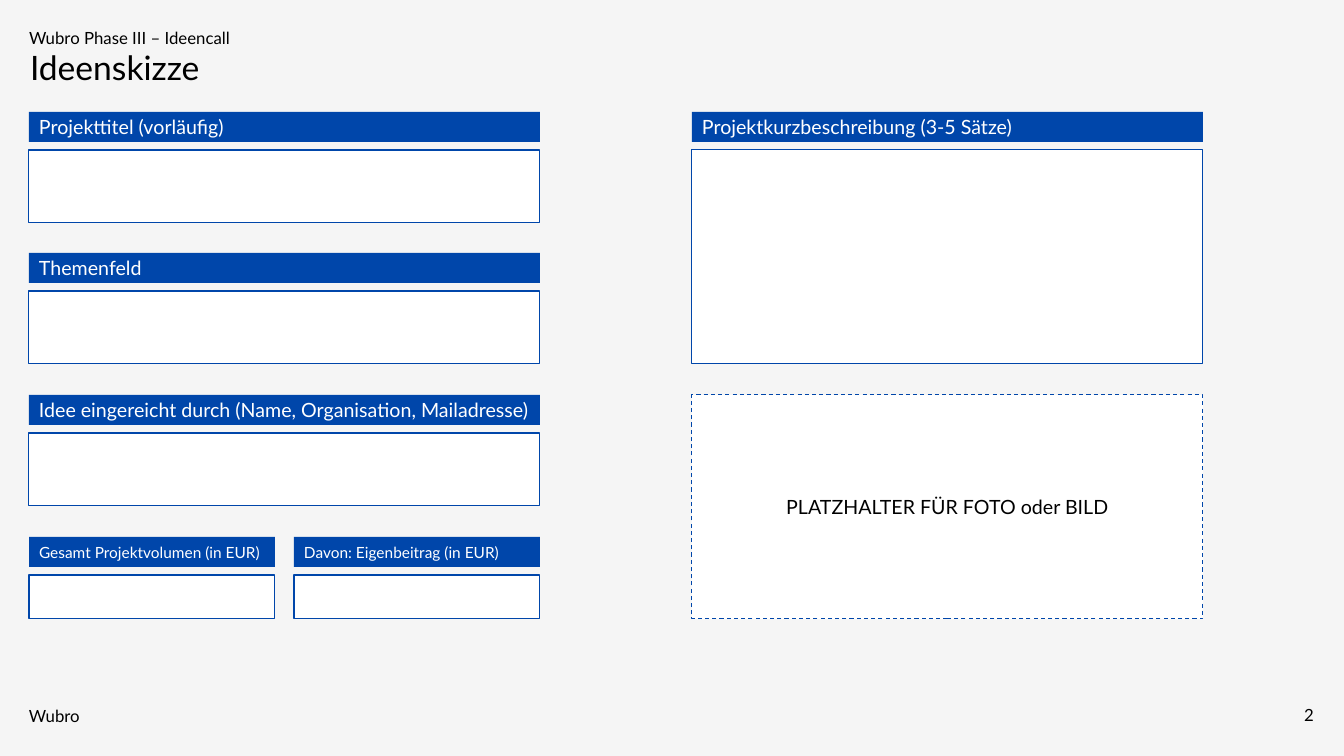
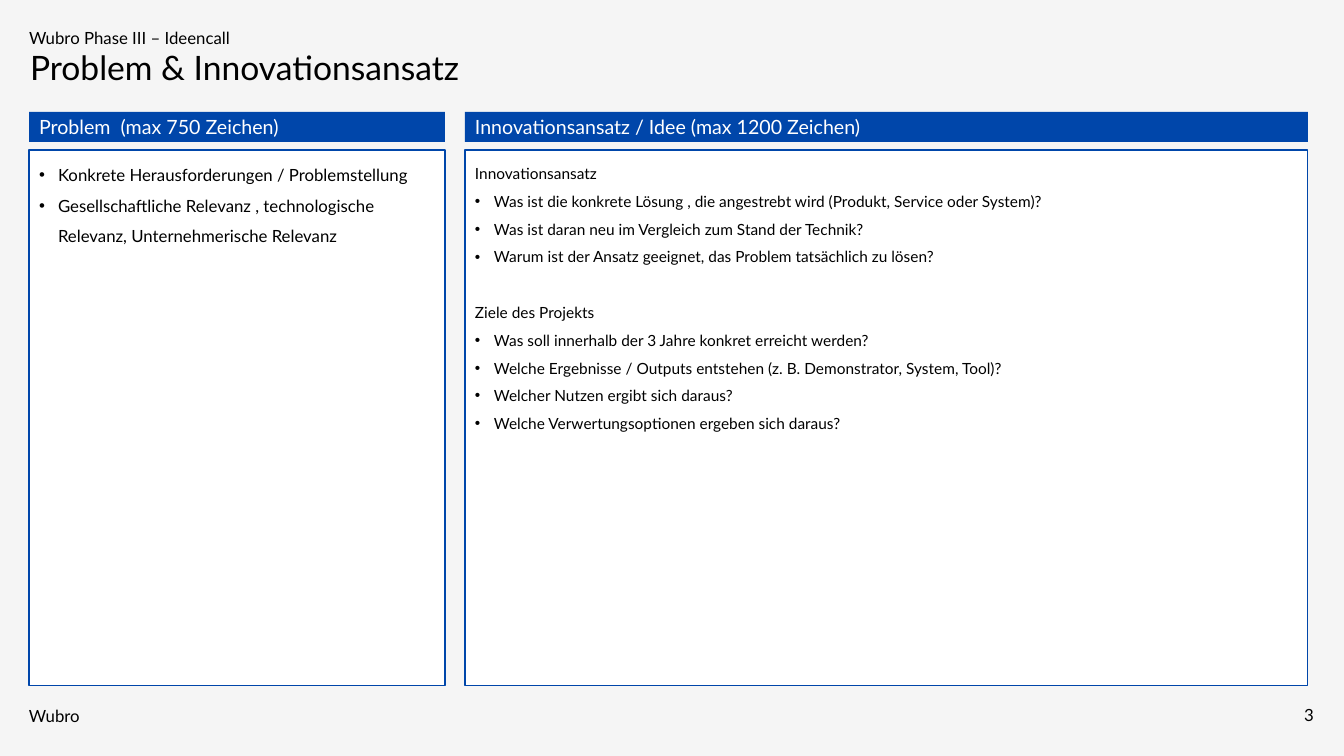
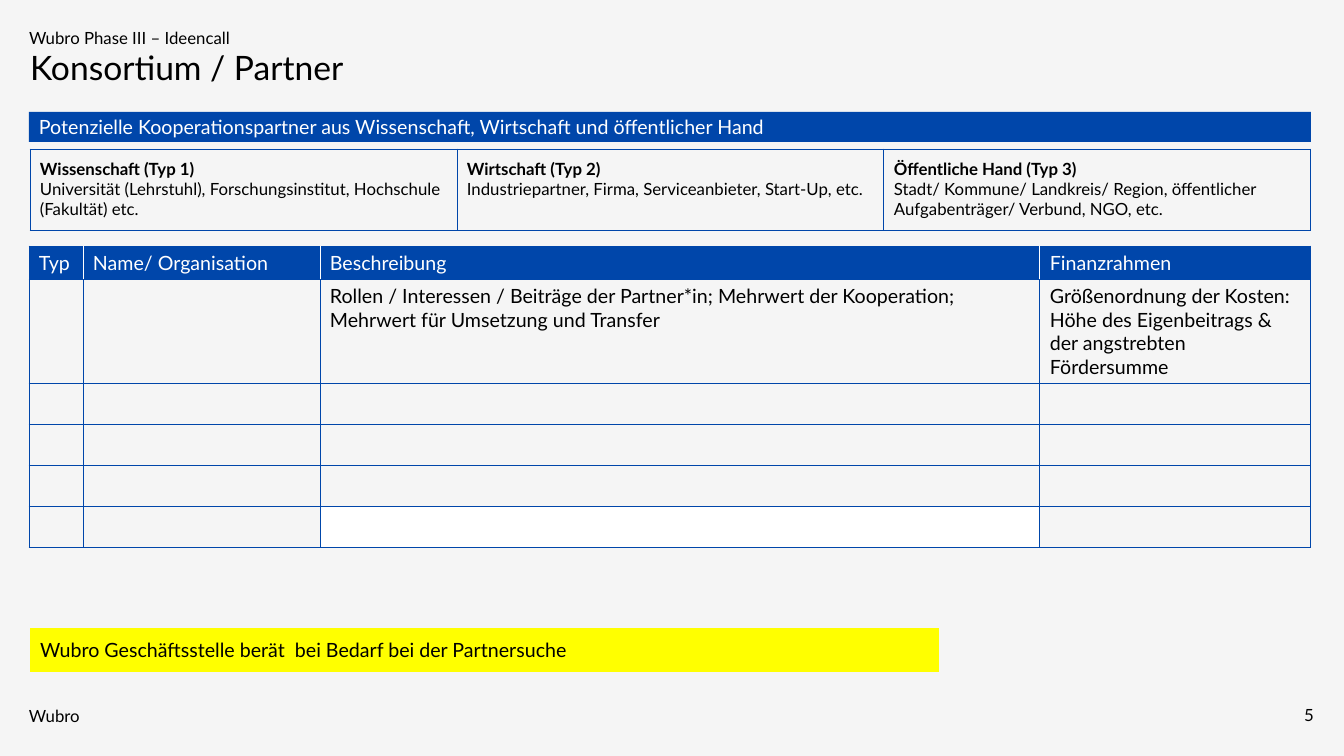
import dataclasses

import pptx
import pptx.dml.color
import pptx.enum.dml
import pptx.enum.shapes
import pptx.enum.text
import pptx.oxml.ns
import pptx.util
from lxml import etree

EMU_PER_PX = 914400 / 100.8
LAYOUT_TWO_CONTENT = 3
LAYOUT_TITLE_ONLY = 5
LEFT = 29
BAR_TOP = 112
BAR_HEIGHT = 30
PANEL_OFFSET = 38
FULL_WIDTH = 1282

ALIGN = pptx.enum.text.PP_ALIGN
ANCHOR = pptx.enum.text.MSO_ANCHOR


@dataclasses.dataclass(frozen=True)
class Theme:
    font: str = "Lato"
    blue: str = "0046AA"
    white: str = "FFFFFF"
    black: str = "000000"
    page: str = "F5F5F5"
    highlight: str = "FFFF00"
    title: int = 24
    heading: int = 14
    body: int = 12
    small: int = 11
    line: float = 0.75


THEME = Theme()


def px(value):
    return pptx.util.Emu(round(value * EMU_PER_PX))


def rgb(value):
    return pptx.dml.color.RGBColor.from_string(value)


def tag(name):
    return pptx.oxml.ns.qn(name)


def place(shape, left, top, width, height):
    shape.left, shape.top = px(left), px(top)
    shape.width, shape.height = px(width), px(height)


def set_frame(frame, anchor=ANCHOR.TOP, inset_x=10, inset_y=5):
    frame.word_wrap = True
    frame.auto_size = pptx.enum.text.MSO_AUTO_SIZE.NONE
    frame.vertical_anchor = anchor
    frame.margin_left = frame.margin_right = px(inset_x)
    frame.margin_top = frame.margin_bottom = px(inset_y)


def write(para, text, size, color=THEME.black, bold=False, align=ALIGN.LEFT,
          spacing=1.0, before=0):
    para.alignment = align
    para.line_spacing = spacing
    para.space_before = pptx.util.Pt(before)
    span = para.add_run()
    span.text = text
    span.font.name = THEME.font
    span.font.size = pptx.util.Pt(size)
    span.font.bold = bold
    span.font.color.rgb = rgb(color)


def set_bullet(para, bulleted):
    properties = para._p.get_or_add_pPr()
    indent = px(19) if bulleted else 0
    properties.set("marL", str(indent))
    properties.set("indent", str(-indent))
    if bulleted:
        color = etree.SubElement(properties, tag("a:buClr"))
        etree.SubElement(color, tag("a:srgbClr"), val=THEME.black)
        etree.SubElement(properties, tag("a:buChar"), char="•")
    else:
        etree.SubElement(properties, tag("a:buNone"))


def add_label(page, text, left, top, width, height, size=THEME.body,
              align=ALIGN.LEFT, anchor=ANCHOR.TOP, spacing=1.0):
    box = page.shapes.add_textbox(px(left), px(top), px(width), px(height))
    set_frame(box.text_frame, anchor, 0, 0)
    write(box.text_frame.paragraphs[0], text, size, align=align, spacing=spacing)


def add_page(deck, layout, title, number):
    """Add a slide with kicker, title, footer and page number."""
    page = deck.slides.add_slide(deck.slide_layouts[layout])
    add_label(page, "Wubro Phase III – Ideencall", LEFT, 30, 959, 21, spacing=0.9)
    heading = page.shapes.title
    place(heading, 30, 51, 959, 30)
    set_frame(heading.text_frame, inset_x=0, inset_y=0)
    write(heading.text_frame.paragraphs[0], title, THEME.title, spacing=0.9)
    add_label(page, "Wubro", LEFT, 706, 80, 20)
    add_label(page, str(number), 1012, 708, 302, 13, align=ALIGN.RIGHT,
              anchor=ANCHOR.MIDDLE)
    return page


def add_block(page, left, top, width, height, fill):
    block = page.shapes.add_shape(pptx.enum.shapes.MSO_SHAPE.RECTANGLE,
                                  px(left), px(top), px(width), px(height))
    block.shadow.inherit = False
    block.fill.solid()
    block.fill.fore_color.rgb = rgb(fill)
    block.line.fill.background()
    set_frame(block.text_frame, ANCHOR.MIDDLE)
    return block


def outline(shape):
    shape.line.color.rgb = rgb(THEME.blue)
    shape.line.width = pptx.util.Pt(THEME.line)


def add_bar(page, text, left, top, width, size=THEME.heading):
    bar = add_block(page, left, top, width, BAR_HEIGHT, THEME.blue)
    write(bar.text_frame.paragraphs[0], text, size, THEME.white)


def add_field(page, text, left, top, width, height, size=THEME.heading):
    """Add a heading bar with an empty panel below it."""
    outline(add_block(page, left, top + PANEL_OFFSET, width, height, THEME.white))
    add_bar(page, text, left, top, width, size)


def fill_list_panel(panel, left, width, size, groups):
    """Turn a body placeholder into a panel of (heading, bullets) groups."""
    place(panel, left, BAR_TOP + PANEL_OFFSET, width, 536)
    panel.fill.solid()
    panel.fill.fore_color.rgb = rgb(THEME.white)
    outline(panel)
    frame = panel.text_frame
    set_frame(frame)
    para = None
    for heading, bullets in groups:
        lines = [(heading, False)] if heading else []
        lines += [(bullet, True) for bullet in bullets]
        for index, (text, bulleted) in enumerate(lines):
            before = 20 if para is not None and index == 0 else 0
            para = frame.paragraphs[0] if para is None else frame.add_paragraph()
            write(para, text, size, spacing=1.5, before=before)
            set_bullet(para, bulleted)


def set_borders(cell, colors):
    properties = cell._tc.get_or_add_tcPr()
    width = str(pptx.util.Pt(THEME.line))
    for side, color in zip("LRTB", colors):
        border = etree.SubElement(properties, tag(f"a:ln{side}"), w=width)
        fill = etree.SubElement(border, tag("a:solidFill"))
        etree.SubElement(fill, tag("a:srgbClr"), val=color)


def add_grid(page, left, top, widths, heights, header=False):
    """Add a blue-ruled table, with a filled first row if header is set."""
    frame = page.shapes.add_table(len(heights), len(widths), px(left), px(top),
                                  px(sum(widths)), px(sum(heights)))
    table = frame.table
    table.first_row = table.horz_banding = False
    for column, width in zip(table.columns, widths):
        column.width = px(width)
    for row_index, height in enumerate(heights):
        table.rows[row_index].height = px(height)
        is_header = header and row_index == 0
        inner = THEME.white if is_header else THEME.blue
        for index in range(len(widths)):
            cell = table.cell(row_index, index)
            set_borders(cell, (inner if index > 0 else THEME.blue,
                               inner if index < len(widths) - 1 else THEME.blue,
                               THEME.blue, THEME.blue))
            if is_header:
                cell.fill.solid()
                cell.fill.fore_color.rgb = rgb(THEME.blue)
            else:
                cell.fill.background()
            cell.margin_left = cell.margin_right = px(10)
            cell.margin_top = cell.margin_bottom = px(5)
    return table


def build_sketch(deck):
    page = add_page(deck, LAYOUT_TITLE_ONLY, "Ideenskizze", 2)
    width, half, right = 511, 246, 692
    tops = (BAR_TOP, 253, 395)
    labels = ("Projekttitel (vorläufig)", "Themenfeld",
              "Idee eingereicht durch (Name, Organisation, Mailadresse)")
    for label, top in zip(labels, tops):
        add_field(page, label, LEFT, top, width, 73)
    add_field(page, "Projektkurzbeschreibung (3-5 Sätze)", right, BAR_TOP, width, 214)
    for label, left in (("Gesamt Projektvolumen (in EUR)", LEFT),
                        ("Davon: Eigenbeitrag (in EUR)", LEFT + width - half)):
        add_field(page, label, left, 537, half, 44, THEME.small)
    photo = add_block(page, right, tops[2], width, 224, THEME.white)
    outline(photo)
    photo.line.dash_style = pptx.enum.dml.MSO_LINE.DASH
    write(photo.text_frame.paragraphs[0], "PLATZHALTER FÜR FOTO oder BILD",
          THEME.heading, align=ALIGN.CENTER)


def build_problem(deck):
    page = add_page(deck, LAYOUT_TWO_CONTENT, "Problem & Innovationsansatz", 3)
    problem = [(None, ["Konkrete Herausforderungen / Problemstellung",
                       "Gesellschaftliche Relevanz , technologische Relevanz, "
                       "Unternehmerische Relevanz"])]
    approach = [
        ("Innovationsansatz", [
            "Was ist die konkrete Lösung , die angestrebt wird "
            "(Produkt, Service oder System)?",
            "Was ist daran neu im Vergleich zum Stand der Technik?",
            "Warum ist der Ansatz geeignet, das Problem tatsächlich zu lösen?"]),
        ("Ziele des Projekts", [
            "Was soll innerhalb der 3 Jahre konkret erreicht werden?",
            "Welche Ergebnisse / Outputs entstehen "
            "(z. B. Demonstrator, System, Tool)?",
            "Welcher Nutzen ergibt sich daraus?",
            "Welche Verwertungsoptionen ergeben sich daraus?"]),
    ]
    columns = (
        (1, "Problem  (max 750 Zeichen)", LEFT, 416, THEME.body, problem),
        (2, "Innovationsansatz / Idee (max 1200 Zeichen)", 465, 843, THEME.small,
         approach),
    )
    for index, label, left, width, size, groups in columns:
        fill_list_panel(page.placeholders[index], left, width, size, groups)
        add_bar(page, label, left, BAR_TOP, width)


def build_partners(deck):
    page = add_page(deck, LAYOUT_TITLE_ONLY, "Konsortium / Partner", 5)
    add_bar(page, "Potenzielle Kooperationspartner aus Wissenschaft, Wirtschaft "
                  "und öffentlicher Hand", LEFT, BAR_TOP, FULL_WIDTH)

    partners = add_grid(page, LEFT, 246, (54, 237, 720, 271),
                        (33, 104, 41, 41, 41, 41), header=True)
    rows = (
        ("Typ", "Name/ Organisation", "Beschreibung", "Finanzrahmen"),
        ("", "", "Rollen / Interessen / Beiträge der Partner*in; Mehrwert der "
                 "Kooperation; Mehrwert für Umsetzung und Transfer",
         "Größenordnung der Kosten: Höhe des Eigenbeitrags & der angstrebten "
         "Fördersumme"),
    )
    for row, (texts, color) in enumerate(zip(rows, (THEME.white, THEME.black))):
        for column, text in enumerate(texts):
            if text:
                write(partners.cell(row, column).text_frame.paragraphs[0], text,
                      THEME.heading, color)
    last_description = partners.cell(5, 2)
    last_description.fill.solid()
    last_description.fill.fore_color.rgb = rgb(THEME.white)

    kinds = (
        ("Wissenschaft (Typ 1)",
         "Universität (Lehrstuhl), Forschungsinstitut, Hochschule (Fakultät) etc."),
        ("Wirtschaft (Typ 2)",
         "Industriepartner, Firma, Serviceanbieter, Start-Up, etc."),
        ("Öffentliche Hand (Typ 3)",
         "Stadt/ Kommune/ Landkreis/ Region, öffentlicher Aufgabenträger/ "
         "Verbund, NGO, etc."),
    )
    overview = add_grid(page, 30, 149, (427,) * len(kinds), (81,))
    for column, (kind, examples) in enumerate(kinds):
        cell = overview.cell(0, column)
        cell.margin_top = cell.margin_bottom = px(10)
        write(cell.text_frame.paragraphs[0], kind, THEME.body, bold=True)
        write(cell.text_frame.add_paragraph(), examples, THEME.body)

    note = add_block(page, 30, 628, 909, 44, THEME.highlight)
    write(note.text_frame.paragraphs[0],
          "Wubro Geschäftsstelle berät  bei Bedarf bei der Partnersuche",
          THEME.heading)


def main():
    deck = pptx.Presentation()
    deck.slide_width, deck.slide_height = px(1344), px(756)
    background = deck.slide_master.background.fill
    background.solid()
    background.fore_color.rgb = rgb(THEME.page)
    build_sketch(deck)
    build_problem(deck)
    build_partners(deck)
    deck.save("out.pptx")


if __name__ == "__main__":
    main()
